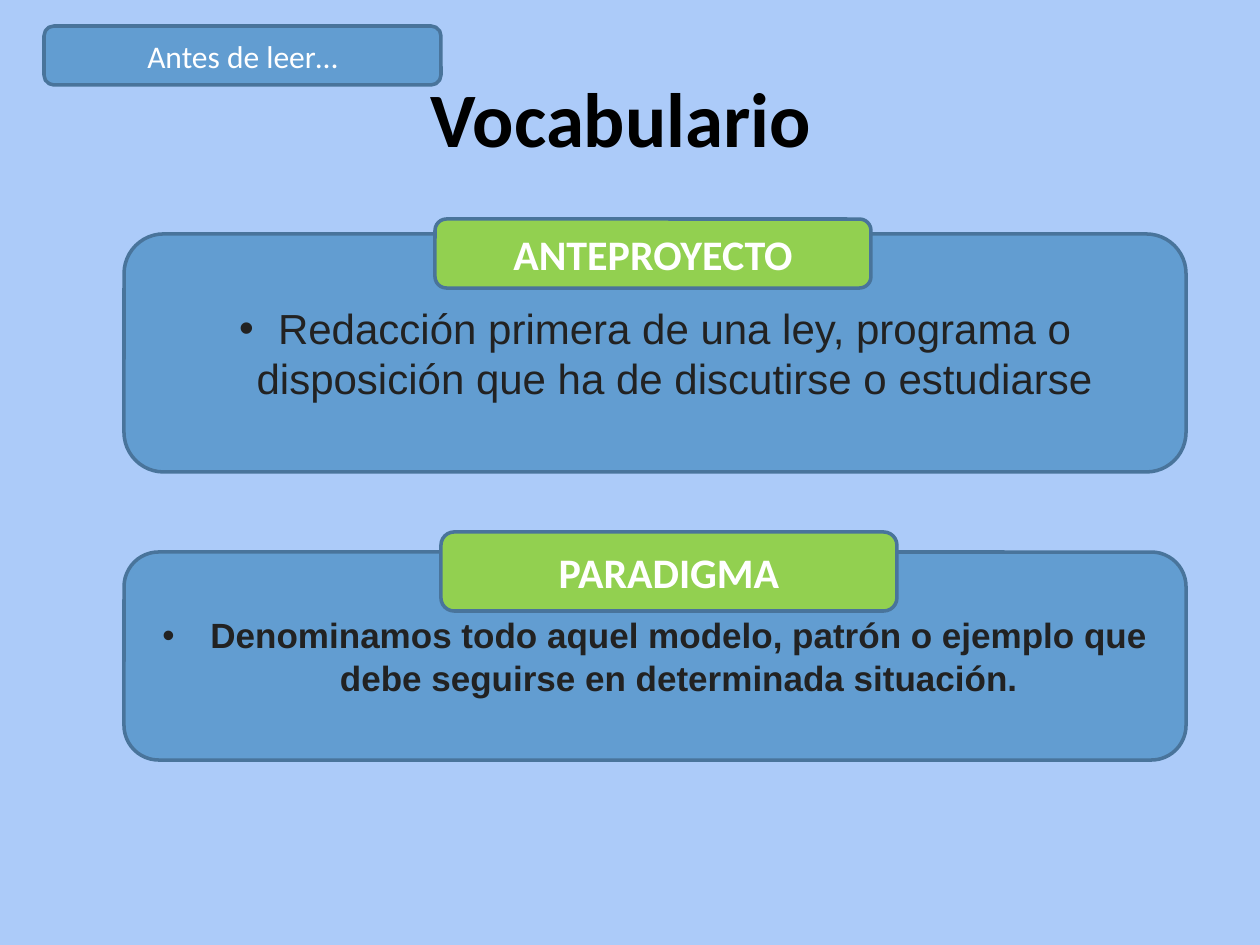
from lxml import etree
from pptx import Presentation
from pptx.dml.color import RGBColor
from pptx.enum.shapes import MSO_SHAPE
from pptx.enum.text import MSO_ANCHOR, PP_ALIGN
from pptx.oxml.ns import qn
from pptx.util import Emu, Pt

ROUNDED = MSO_SHAPE.ROUNDED_RECTANGLE
MIDDLE = MSO_ANCHOR.MIDDLE
CENTER = PP_ALIGN.CENTER
EMU_PER_PX = 914400 / 126
COLORS = {
    "background": "ACCBF9",
    "panel": "629DD1",
    "label": "92D050",
    "outline": "49749B",
    "title": "000000",
    "light": "FFFFFF",
    "dark": "222222",
}


def px(length):
    """Turn a length in px into EMU."""
    return Emu(round(length * EMU_PER_PX))


def color(name):
    """Look up a named colour."""
    return RGBColor.from_string(COLORS[name])


def set_text(shape, text, size, ink, font="Calibri", bold=False):
    """Write one centred paragraph into a shape and return it."""
    frame = shape.text_frame
    frame.word_wrap = True
    frame.vertical_anchor = MIDDLE
    para = frame.paragraphs[0]
    para.text = text
    para.alignment = CENTER
    para.font.name = font
    para.font.size = Pt(size)
    para.font.bold = bold
    para.font.color.rgb = color(ink)
    return para


def add_title(slide, text):
    """Place and fill the title placeholder."""
    title = slide.shapes.title
    title.left, title.top, title.width, title.height = map(px, (63, 38, 1134, 157))
    set_text(title, text, 44, "title", bold=True)


def add_box(slide, bounds, fill):
    """Add an outlined rounded box."""
    box = slide.shapes.add_shape(ROUNDED, *map(px, bounds))
    box.shadow.inherit = False
    box.fill.solid()
    box.fill.fore_color.rgb = color(fill)
    box.line.color.rgb = color("outline")
    box.line.width = Pt(2)
    return box


def add_definition(slide, bounds, text, size, indent, bold):
    """Add a panel holding a bulleted definition."""
    box = add_box(slide, bounds, "panel")
    para = set_text(box, text, size, "dark", "Arial", bold)
    properties = para._p.get_or_add_pPr()
    properties.set("marL", str(px(indent)))
    properties.set("indent", str(-px(indent)))
    bullet_font = etree.Element(qn("a:buFont"), typeface="Arial")
    bullet = etree.Element(qn("a:buChar"), char="•")
    properties[:0] = [bullet_font, bullet]


def add_label(slide, bounds, text, size=24, fill="label", bold=True):
    """Add a small box with a light caption."""
    set_text(add_box(slide, bounds, fill), text, size, "light", bold=bold)


def main():
    """Build the vocabulary slide."""
    deck = Presentation()
    deck.slide_width, deck.slide_height = px(1260), px(945)
    slide = deck.slides.add_slide(deck.slide_layouts[5])
    slide.background.fill.solid()
    slide.background.fill.fore_color.rgb = color("background")

    add_title(slide, "Vocabulario ")
    add_label(slide, (44, 26, 397, 59), "Antes de leer…", 18, "panel", False)
    add_definition(
        slide, (124, 234, 1062, 238),
        "Redacción primera de una ley, programa o disposición que ha de discutirse o estudiarse",
        24, 39, False)
    add_definition(
        slide, (124, 552, 1062, 208),
        "Denominamos todo aquel modelo, patrón o ejemplo que debe seguirse en determinada situación.",
        20, 48, True)
    add_label(slide, (435, 219, 436, 69), "ANTEPROYECTO")
    add_label(slide, (441, 532, 456, 79), "PARADIGMA")
    deck.save("out.pptx")


if __name__ == "__main__":
    main()
